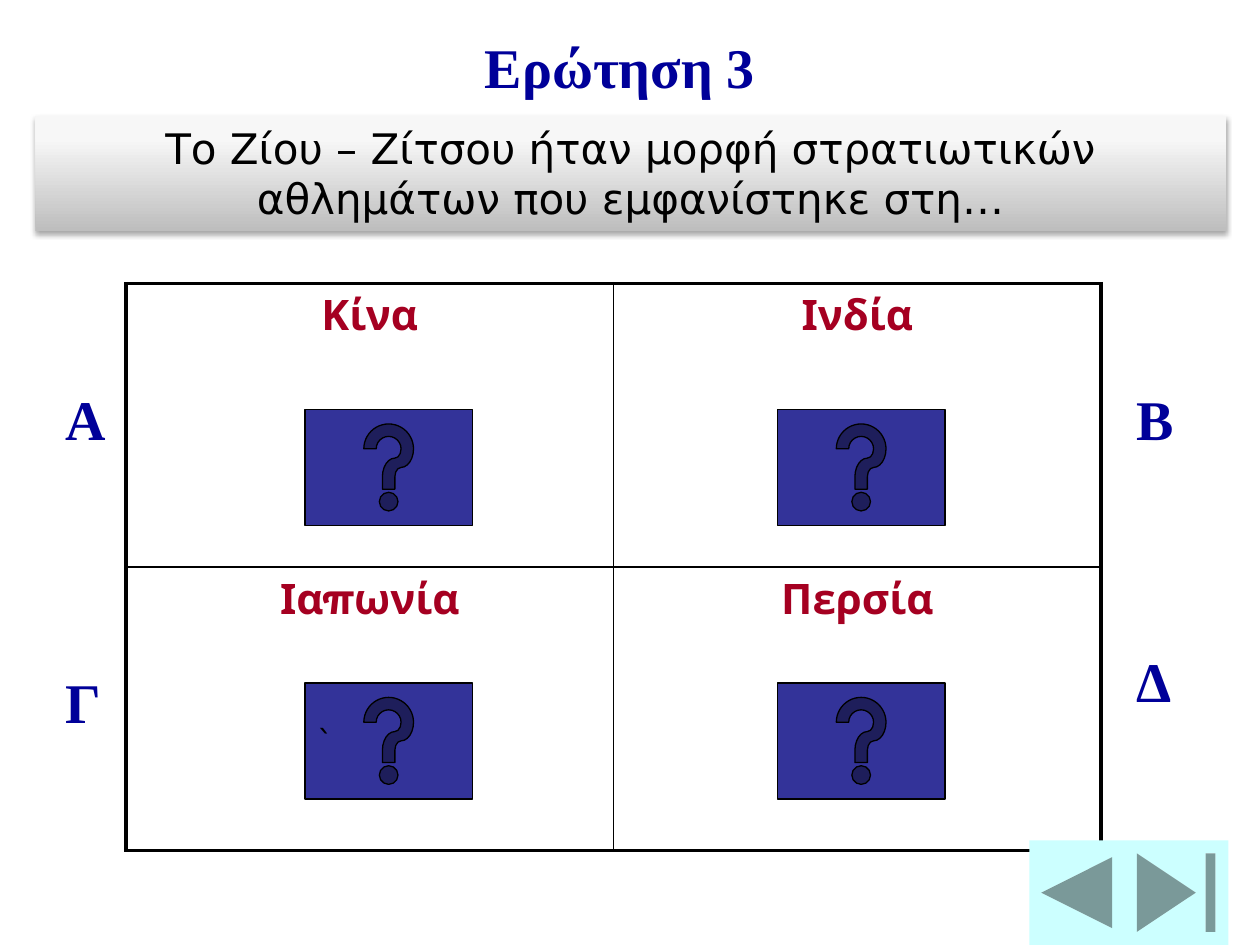
"""Build a quiz slide with four answers and navigation buttons."""
import pptx
import pptx.dml.color
import pptx.enum.shapes
import pptx.enum.text
import pptx.oxml
import pptx.oxml.ns
import pptx.util

Inches = pptx.util.Inches
Pt = pptx.util.Pt
SHAPES = pptx.enum.shapes.MSO_SHAPE
CENTER = pptx.enum.text.PP_ALIGN.CENTER
LEFT = pptx.enum.text.PP_ALIGN.LEFT
NAMESPACE = pptx.oxml.ns.nsdecls("a")
COLORS = {
    "white": "FFFFFF", "black": "000000", "answer": "A50021", "heading": "000099",
    "help": "333399", "navigation": "CCFFFF",
    "banner_dark": "BEBEBE", "banner_mid": "F7F7F7", "banner_light": "F8F8F8",
}


def write(frame, text, size, font, color, bold=False, align=LEFT):
    frame.text = text
    para = frame.paragraphs[0]
    para.alignment = align
    span = para.runs[0]
    span.font.size = Pt(size)
    span.font.name = font
    span.font.bold = bold
    span.font.color.rgb = pptx.dml.color.RGBColor.from_string(COLORS[color])


def add_button(kind, left, top, width, height, color):
    button = page.shapes.add_shape(kind, Inches(left), Inches(top), Inches(width), Inches(height))
    button.shadow.inherit = False
    button.fill.solid()
    button.fill.fore_color.rgb = pptx.dml.color.RGBColor.from_string(COLORS[color])
    button.line.fill.background()
    return button


deck = pptx.Presentation()
deck.slide_width = Inches(10)
deck.slide_height = Inches(7.5)
page = deck.slides.add_slide(deck.slide_layouts[6])

answers = [["Κίνα", "Ινδία"], ["Ιαπωνία", "Περσία"]]
table = page.shapes.add_table(2, 2, Inches(1), Inches(2.25), Inches(7.74), Inches(4.5)).table
for row, names in enumerate(answers):
    for column, name in enumerate(names):
        cell = table.cell(row, column)
        write(cell.text_frame, name, 24, "Montserrat", "answer", True, CENTER)
        borders = {"lnL": column == 0, "lnR": column == 1, "lnT": row == 0, "lnB": row == 1}
        properties = cell._tc.get_or_add_tcPr()
        for side, outer in borders.items():
            width = Pt(2.25 if outer else 1)
            properties.append(pptx.oxml.parse_xml(
                f'<a:{side} {NAMESPACE} w="{width}"><a:solidFill>'
                f'<a:srgbClr val="{COLORS["black"]}"/></a:solidFill></a:{side}>'))
        cell.fill.solid()
        cell.fill.fore_color.rgb = pptx.dml.color.RGBColor.from_string(COLORS["white"])

headings = [
    ("Α", 0.42, 3, 0.5), ("Γ", 0.42, 5.25, 0.5),
    ("Β", 8.92, 3, 0.5), ("Δ", 8.92, 5.08, 0.5),
    ("Ερώτηση 3", 3.75, 0.21, 2.67),
]
for text, left, top, width in headings:
    box = page.shapes.add_textbox(Inches(left), Inches(top), Inches(width), Inches(0.63))
    box.text_frame.word_wrap = True
    box.text_frame.auto_size = pptx.enum.text.MSO_AUTO_SIZE.SHAPE_TO_FIT_TEXT
    write(box.text_frame, text, 32, "Times New Roman", "heading", True)

for left, top in [(2.42, 5.42), (6.17, 5.42), (6.17, 3.25), (2.42, 3.25)]:
    button = add_button(SHAPES.ACTION_BUTTON_HELP, left, top, 1.33, 0.92, "help")
    button.line.color.rgb = pptx.dml.color.RGBColor.from_string(COLORS["black"])
    button.line.width = Pt(0.75)
    if (left, top) == (2.42, 5.42):
        button.text_frame.word_wrap = False
        button.text_frame.vertical_anchor = pptx.enum.text.MSO_ANCHOR.MIDDLE
        write(button.text_frame, "`", 18, "DejaVu Sans", "black")

add_button(SHAPES.ACTION_BUTTON_END, 8.92, 6.67, 0.83, 0.83, "navigation")
add_button(SHAPES.ACTION_BUTTON_BACK_OR_PREVIOUS, 8.17, 6.67, 0.75, 0.83, "navigation")

banner = add_button(SHAPES.RECTANGLE, 0.28, 0.92, 9.45, 0.91, "banner_light")
stops = "".join(
    f'<a:gs pos="{position * 1000}"><a:srgbClr val="{COLORS[color]}"/></a:gs>'
    for position, color in [(0, "banner_dark"), (80, "banner_mid"), (100, "banner_light")])
style = banner._element.spPr
style.replace(style.find(pptx.oxml.ns.qn("a:solidFill")), pptx.oxml.parse_xml(
    f'<a:gradFill {NAMESPACE} rotWithShape="1"><a:gsLst>{stops}</a:gsLst>'
    '<a:lin ang="16200000" scaled="0"/></a:gradFill>'))
style.find(pptx.oxml.ns.qn("a:effectLst")).append(pptx.oxml.parse_xml(
    f'<a:outerShdw {NAMESPACE} blurRad="{Pt(3.1)}" dist="{Pt(1.8)}" dir="5400000" rotWithShape="0">'
    f'<a:srgbClr val="{COLORS["black"]}"><a:alpha val="35000"/></a:srgbClr></a:outerShdw>'))
banner.text_frame.word_wrap = True
banner.text_frame.auto_size = pptx.enum.text.MSO_AUTO_SIZE.SHAPE_TO_FIT_TEXT
banner.text_frame.vertical_anchor = pptx.enum.text.MSO_ANCHOR.TOP
question = "Το Ζίου – Ζίτσου ήταν μορφή στρατιωτικών αθλημάτων που εμφανίστηκε στη…"
write(banner.text_frame, question, 24, "DejaVu Sans", "black", align=CENTER)

deck.save("out.pptx")
